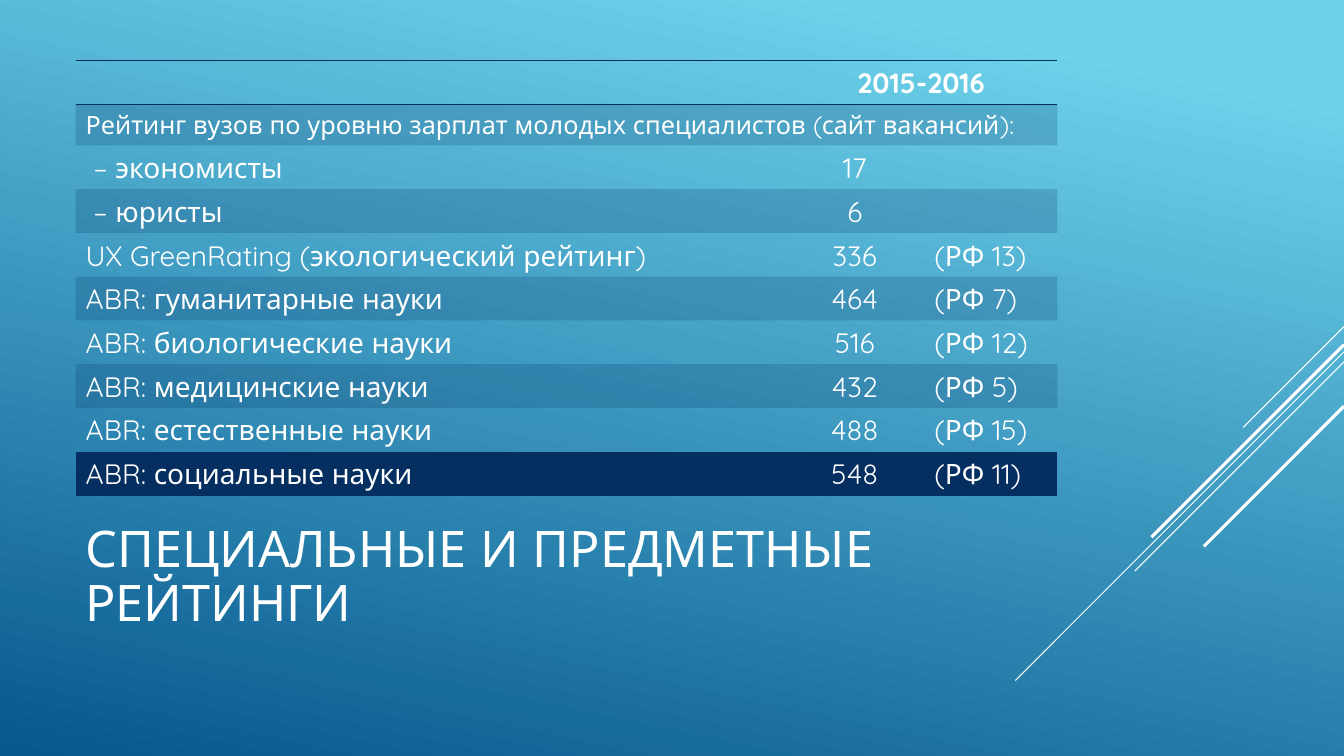
import pptx
import pptx.util
import pptx.dml.color
import pptx.enum.shapes
import pptx.enum.text
import pptx.oxml
import pptx.oxml.ns
from dataclasses import dataclass

Pt = pptx.util.Pt
Align = pptx.enum.text.PP_ALIGN
Anchor = pptx.enum.text.MSO_ANCHOR


@dataclass(frozen=True)
class Theme:
    """Colours, font and type sizes of the slide."""
    light: str = "6ED2EB"
    deep: str = "06588E"
    navy: str = "052F61"
    white: str = "FFFFFF"
    font: str = "Quicksand"
    title: int = 36
    body: int = 20
    note: int = 18


THEME = Theme()
PLAIN = "{2D5ABB26-0587-4C30-8999-92F81FD0307C}"
COLS = (506.9, 99.4, 95)
ROW = 29.5
ROWS = [
    ("", "2015-2016", ""),
    ("Рейтинг вузов по уровню зарплат молодых специалистов (сайт вакансий):", "", ""),
    (" – экономисты", "17", ""),
    (" – юристы", "6", ""),
    ("UX GreenRating (экологический рейтинг)", "336", "(РФ 13)"),
    ("ABR: гуманитарные науки", "464", "(РФ 7)"),
    ("ABR: биологические науки", "516", "(РФ 12)"),
    ("ABR: медицинские науки", "432", "(РФ 5)"),
    ("ABR: естественные науки", "488", "(РФ 15)"),
    ("ABR: социальные науки", "548", "(РФ 11)"),
]
RAYS = [
    (233.3, 72, 0.75),
    (251.3, 234.7, 0.75),
    (258.5, 149.4, 0.75),
    (246.2, 137.5, 2.25),
    (290.2, 100.1, 2.25),
]


def rgb(code):
    """Turn a hex code into a colour."""
    return pptx.dml.color.RGBColor.from_string(code)


def xml(tag, body="", **attrs):
    """Make a drawing element from its tag, inner markup and attributes."""
    pairs = " ".join(f'{key}="{val}"' for key, val in attrs.items())
    head = f"<a:{tag} {pptx.oxml.ns.nsdecls('a')} {pairs}>"
    return pptx.oxml.parse_xml(f"{head}{body}</a:{tag}>")


def write(frame, text, size=THEME.body, bold=False, align=Align.LEFT, space=None):
    """Put formatted text into the first paragraph of a frame."""
    para = frame.paragraphs[0]
    para.alignment = align
    para.line_spacing = space
    run = para.add_run()
    run.text = text
    run.font.name = THEME.font
    run.font.size = Pt(size)
    run.font.bold = bold
    run.font.color.rgb = rgb(THEME.white)


def paint(slide):
    """Fill the background with the slanted gradient."""
    fill = slide.background.fill
    fill.gradient()
    fill.gradient_angle = 258
    stops = ((0.1, THEME.light), (1, THEME.deep))
    for stop, (place, code) in zip(fill.gradient_stops, stops):
        stop.position = place
        stop.color.rgb = rgb(code)


def ray(slide, top, run, width):
    """Draw a diagonal line down and left from the right edge."""
    line = slide.shapes.add_connector(
        pptx.enum.shapes.MSO_CONNECTOR.STRAIGHT,
        Pt(960), Pt(top), Pt(960 - run), Pt(top + run))
    line.line.color.rgb = rgb(THEME.white)
    line.line.width = Pt(width)
    line._element.spPr.append(xml("effectLst"))


def title(slide, text):
    """Add the slide title."""
    box = slide.shapes.add_textbox(Pt(54), Pt(353.5), Pt(671.8), Pt(118.8))
    frame = box.text_frame
    frame.word_wrap = True
    frame.vertical_anchor = Anchor.MIDDLE
    write(frame, text, size=THEME.title, space=0.9)


def rule(cell, side):
    """Draw a thin navy border on one side of a cell."""
    body = f'<a:solidFill><a:srgbClr val="{THEME.navy}"/></a:solidFill>'
    cell._tc.get_or_add_tcPr().append(xml(side, body, w=Pt(1)))


def shade(cell, dark):
    """Give a cell a faint navy tint or no fill."""
    if not dark:
        cell.fill.background()
        return
    cell.fill.solid()
    cell.fill.fore_color.rgb = rgb(THEME.navy)
    tint = cell._tc.tcPr.find(".//" + pptx.oxml.ns.qn("a:srgbClr"))
    tint.append(xml("alpha", val=20000))


def grid(slide):
    """Add the table of ratings."""
    last = len(ROWS) - 1
    table = slide.shapes.add_table(
        len(ROWS), len(COLS), Pt(54), Pt(43.2),
        Pt(sum(COLS)), Pt(ROW * len(ROWS))).table
    table.first_row = table.horz_banding = False
    table._tbl.tblPr.find(pptx.oxml.ns.qn("a:tableStyleId")).text = PLAIN
    for col, width in zip(table.columns, COLS):
        col.width = Pt(width)
    table.cell(0, 1).merge(table.cell(0, 2))
    table.cell(1, 0).merge(table.cell(1, 2))
    for r, texts in enumerate(ROWS):
        table.rows[r].height = Pt(ROW)
        for c, text in enumerate(texts):
            cell = table.cell(r, c)
            cell.vertical_anchor = Anchor.MIDDLE
            if r == 0:
                rule(cell, "lnT")
            if r in (0, last):
                rule(cell, "lnB")
            shade(cell, r % 2 == 1)
            if text:
                write(cell.text_frame, text, bold=r == 0,
                      size=THEME.note if r == 1 else THEME.body,
                      align=Align.CENTER if c == 1 else Align.LEFT)


def main():
    """Build and save the slide."""
    deck = pptx.Presentation()
    deck.slide_width, deck.slide_height = Pt(960), Pt(540)
    slide = deck.slides.add_slide(deck.slide_layouts[6])
    paint(slide)
    for item in RAYS:
        ray(slide, *item)
    title(slide, "СПЕЦИАЛЬНЫЕ И ПРЕДМЕТНЫЕ РЕЙТИНГИ")
    grid(slide)
    deck.save("out.pptx")


if __name__ == "__main__":
    main()
